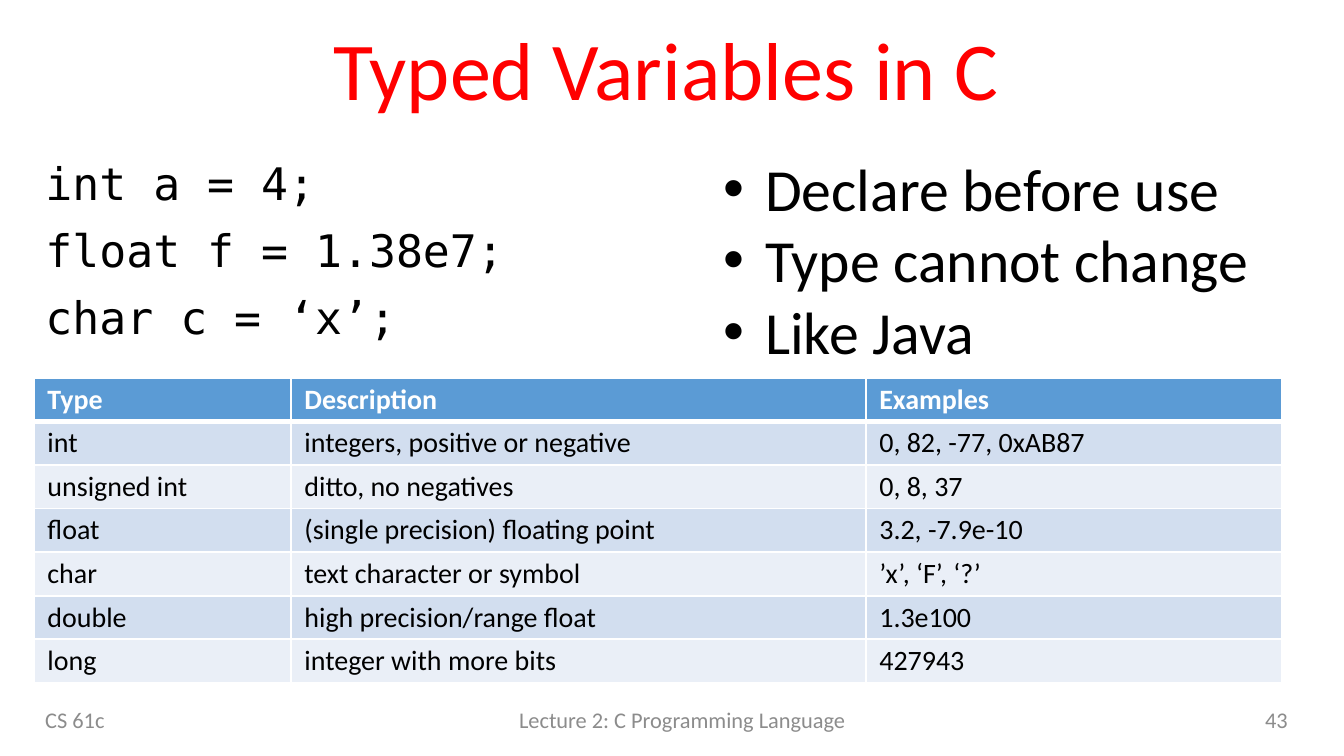
from lxml.etree import SubElement as Sub
from pptx import Presentation
from pptx.dml.color import RGBColor as RGB
from pptx.enum.text import MSO_ANCHOR as Anchor, MSO_AUTO_SIZE as Auto, PP_ALIGN as Align
from pptx.oxml.ns import qn
from pptx.util import Pt

SCALE = 9144000 / 1344
RED = RGB(0xFF, 0x00, 0x00)
BLACK = RGB(0x00, 0x00, 0x00)
WHITE = RGB(0xFF, 0xFF, 0xFF)
GREY = RGB(0x8C, 0x8C, 0x8C)
BLUE = RGB(0x5B, 0x9B, 0xD5)
BANDS = RGB(0xD2, 0xDE, 0xEF), RGB(0xEA, 0xEF, 0xF7)
SANS = "Calibri"
MONO = "DejaVu Sans Mono"

CODE = ["int a = 4;", "float f = 1.38e7;", "char c = ‘x’;"]
RULES = ["Declare before use", "Type cannot change", "Like Java"]
TYPES = [
    ("Type", "Description", "Examples"),
    ("int", "integers, positive or negative", "0, 82, -77, 0xAB87"),
    ("unsigned int", "ditto, no negatives", "0, 8, 37"),
    ("float", "(single precision) floating point", "3.2, -7.9e-10"),
    ("char", "text character or symbol", "’x’, ‘F’, ‘?’"),
    ("double", "high precision/range float", "1.3e100"),
    ("long", "integer with more bits", "427943"),
]


def px(n):
    return round(n * SCALE)


def place(shape, box):
    shape.left, shape.top, shape.width, shape.height = map(px, box)


def style(para, size, color, font=SANS, bold=False):
    for run in para.runs:
        run.font.name = font
        run.font.size = Pt(size)
        run.font.bold = bold
        run.font.color.rgb = color


def mark(para, char=None, indent=0):
    props = para._p.get_or_add_pPr()
    props.set("marL", str(px(indent)))
    props.set("indent", str(-px(indent)))
    if char:
        Sub(props, qn("a:buFont")).set("typeface", "Arial")
        Sub(props, qn("a:buChar")).set("char", char)
    else:
        Sub(props, qn("a:buNone"))


def add_title(slide, box):
    title = slide.shapes.title
    place(title, box)
    frame = title.text_frame
    frame.text = "Typed Variables in C"
    frame.auto_size = Auto.NONE
    frame.vertical_anchor = Anchor.MIDDLE
    para = frame.paragraphs[0]
    para.alignment = Align.CENTER
    para.line_spacing = 0.9
    style(para, 44, RED)


def add_code(slide, box):
    body = slide.placeholders[1]
    place(body, box)
    frame = body.text_frame
    frame.text = "\n".join(CODE)
    frame.auto_size = Auto.NONE
    for para in frame.paragraphs:
        para.line_spacing = 0.9
        para.space_before = Pt(10)
        mark(para)
        style(para, 24, BLACK, MONO)


def add_rules(slide, box):
    frame = slide.shapes.add_textbox(*map(px, box)).text_frame
    frame.text = "\n".join(RULES)
    frame.word_wrap = False
    frame.auto_size = Auto.SHAPE_TO_FIT_TEXT
    for para in frame.paragraphs:
        mark(para, "•", 42)
        style(para, 32, BLACK)


def add_edges(cell, top, base):
    props = cell._tc.get_or_add_tcPr()
    for side, width in zip("LRTB", (1, 1, top, base)):
        line = Sub(props, qn(f"a:ln{side}"))
        line.set("w", str(Pt(width)))
        fill = Sub(line, qn("a:solidFill"))
        Sub(fill, qn("a:srgbClr")).set("val", str(WHITE))


def add_types(slide, box, widths):
    table = slide.shapes.add_table(len(TYPES), len(widths), *map(px, box)).table
    for col, width in zip(table.columns, widths):
        col.width = px(width)
    for i, row in enumerate(TYPES):
        head = i == 0
        table.rows[i].height = px(box[3] / len(TYPES))
        for j, text in enumerate(row):
            cell = table.cell(i, j)
            cell.text = text
            cell.margin_top = cell.margin_bottom = px(4)
            cell.vertical_anchor = Anchor.MIDDLE
            add_edges(cell, 3 if i == 1 else 1, 3 if head else 1)
            cell.fill.solid()
            cell.fill.fore_color.rgb = BLUE if head else BANDS[(i - 1) % 2]
            style(cell.text_frame.paragraphs[0], 15, WHITE if head else BLACK, bold=head)


def add_footer(slide, box):
    left, top, width, height = box
    parts = [
        ("CS 61c", 0, 331, Align.LEFT),
        ("Lecture 2: C Programming Language", 360, 581, Align.CENTER),
        ("43", width - 302, 302, Align.RIGHT),
    ]
    for text, x, wide, align in parts:
        area = map(px, (left + x, top, wide, height))
        frame = slide.shapes.add_textbox(*area).text_frame
        frame.text = text
        frame.word_wrap = True
        frame.vertical_anchor = Anchor.MIDDLE
        para = frame.paragraphs[0]
        para.alignment = align
        style(para, 12, GREY)


def main():
    deck = Presentation()
    deck.slide_width, deck.slide_height = px(1344), px(756)
    slide = deck.slides.add_slide(deck.slide_layouts[1])
    add_title(slide, (32, 16, 1269, 116))
    add_code(slide, (32, 155, 1269, 525))
    add_footer(slide, (32, 700, 1269, 40))
    add_rules(slide, (710, 145, 556, 231))
    add_types(slide, (34, 378, 1248, 305), (257, 575, 416))
    deck.save("out.pptx")


if __name__ == "__main__":
    main()
